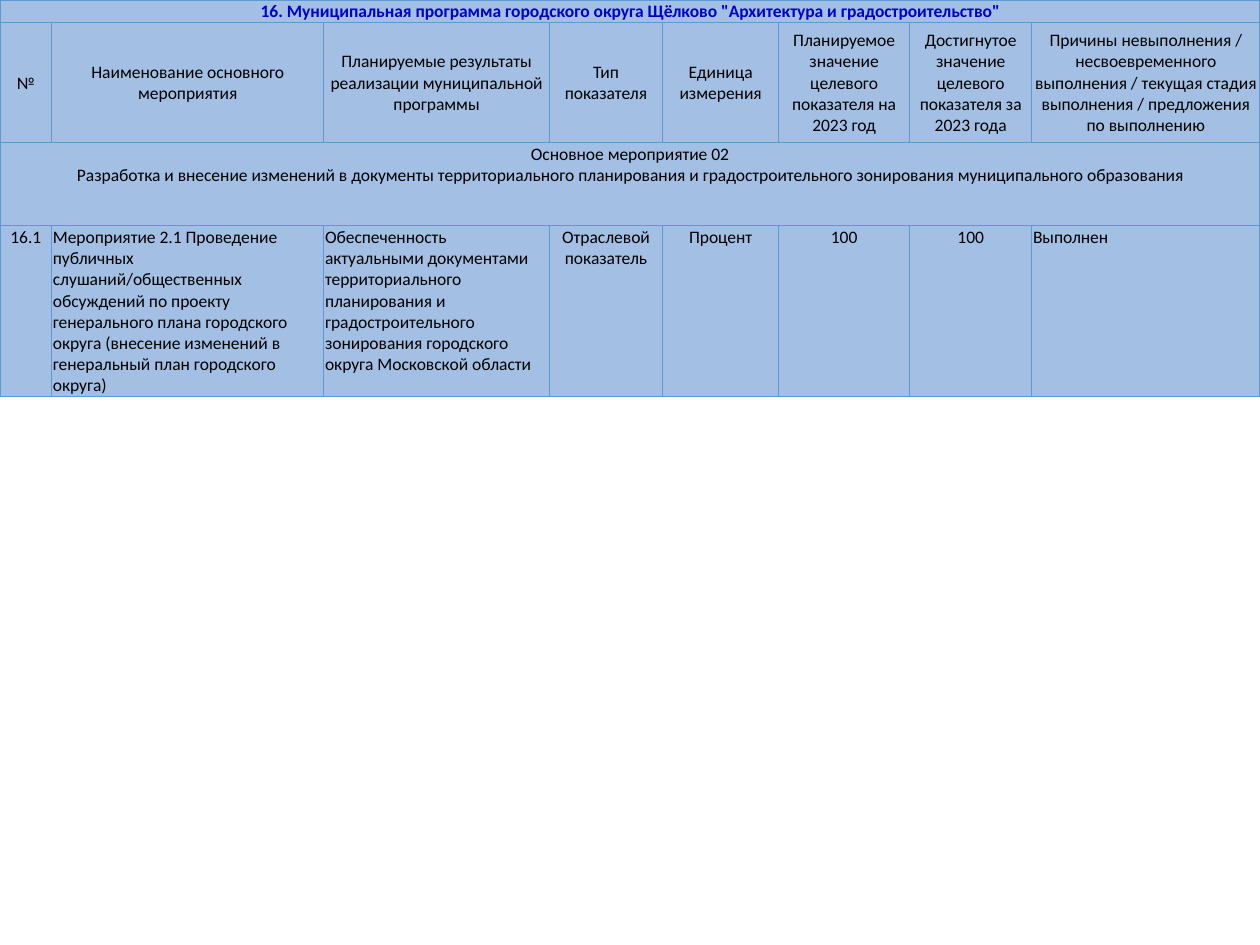
from dataclasses import dataclass

from lxml import etree
from pptx import Presentation
from pptx import util as u
from pptx.dml.color import RGBColor
from pptx.enum import text
from pptx.oxml import ns

FONT = "Calibri"
FILL = RGBColor(0xA3, 0xC0, 0xE4)
BORDER = RGBColor(0x5B, 0x9B, 0xD5)
TITLE_BLUE = RGBColor(0x00, 0x00, 0xCC)
BLACK = RGBColor(0x00, 0x00, 0x00)

COLUMN_WIDTHS = [0.41, 2.16, 1.79, 0.9, 0.92, 1.04, 0.97, 1.81]
ROW_HEIGHTS = [0.18, 0.95, 0.66, 1.36]


@dataclass
class CellStyle:
    color: RGBColor = BLACK
    bold: bool = False
    centered: bool = True
    middle: bool = False


TITLE = CellStyle(color=TITLE_BLUE, bold=True)
HEADER = CellStyle(middle=True)
CENTERED = CellStyle()
LEFT = CellStyle(centered=False)

PROGRAM_TITLE = ('16. Муниципальная программа городского округа Щёлково '
                 '"Архитектура и градостроительство"')
HEADERS = [
    "№",
    "Наименование основного мероприятия",
    "Планируемые результаты реализации муниципальной программы",
    "Тип показателя",
    "Единица измерения",
    "Планируемое значение целевого показателя на 2023 год",
    "Достигнутое значение целевого показателя за 2023 года",
    "Причины невыполнения / несвоевременного выполнения / текущая стадия "
    "выполнения / предложения по выполнению",
]
SECTION = [
    "Основное мероприятие 02",
    "Разработка и внесение изменений в документы территориального планирования "
    "и градостроительного зонирования муниципального образования",
]
ACTIVITY = [
    ("16.1", CENTERED),
    ("Мероприятие 2.1 Проведение публичных слушаний/общественных обсуждений "
     "по проекту генерального плана городского округа (внесение изменений "
     "в генеральный план городского округа)", LEFT),
    ("Обеспеченность актуальными документами территориального планирования "
     "и градостроительного зонирования городского округа Московской области", LEFT),
    ("Отраслевой показатель", CENTERED),
    ("Процент", CENTERED),
    ("100", CENTERED),
    ("100", CENTERED),
    ("Выполнен", LEFT),
]


def format_cell(cell) -> None:
    """Set the margins, borders and fill shared by every cell."""
    cell.margin_left = cell.margin_right = cell.margin_top = u.Inches(0.01)
    cell.margin_bottom = 0
    properties = cell._tc.get_or_add_tcPr()
    for side in ("a:lnL", "a:lnR", "a:lnT", "a:lnB"):
        line = etree.SubElement(properties, ns.qn(side), w=str(u.Pt(0.5)))
        solid = etree.SubElement(line, ns.qn("a:solidFill"))
        etree.SubElement(solid, ns.qn("a:srgbClr"), val=str(BORDER))
    cell.fill.solid()
    cell.fill.fore_color.rgb = FILL


def write_cell(cell, lines: list[str], style: CellStyle) -> None:
    """Write the lines as runs of one paragraph."""
    anchor = text.MSO_ANCHOR
    cell.vertical_anchor = anchor.MIDDLE if style.middle else anchor.TOP
    paragraph = cell.text_frame.paragraphs[0]
    paragraph.alignment = text.PP_ALIGN.CENTER if style.centered else text.PP_ALIGN.LEFT
    for index, line in enumerate(lines):
        if index:
            paragraph.add_line_break()
        run = paragraph.add_run()
        run.text = line
        run.font.name = FONT
        run.font.size = u.Pt(10)
        run.font.bold = style.bold
        run.font.color.rgb = style.color


def add_program_table(slide) -> None:
    table = slide.shapes.add_table(
        len(ROW_HEIGHTS), len(COLUMN_WIDTHS), 0, 0,
        u.Inches(sum(COLUMN_WIDTHS)), u.Inches(sum(ROW_HEIGHTS))).table
    table.first_row = table.horz_banding = False
    for column, width in zip(table.columns, COLUMN_WIDTHS):
        column.width = u.Inches(width)
    for row, height in zip(table.rows, ROW_HEIGHTS):
        row.height = u.Inches(height)
    for cell in table.iter_cells():
        format_cell(cell)

    # Full-width rows: programme title and section
    last_column = len(COLUMN_WIDTHS) - 1
    for row, lines, style in ((0, [PROGRAM_TITLE], TITLE), (2, SECTION, CENTERED)):
        table.cell(row, 0).merge(table.cell(row, last_column))
        write_cell(table.cell(row, 0), lines, style)

    # Column headers and activity
    for column, (header, (value, style)) in enumerate(zip(HEADERS, ACTIVITY)):
        write_cell(table.cell(1, column), [header], HEADER)
        write_cell(table.cell(3, column), [value], style)


def main() -> None:
    presentation = Presentation()
    presentation.slide_width = u.Inches(10)
    presentation.slide_height = u.Inches(7.5)
    slide = presentation.slides.add_slide(presentation.slide_layouts[6])
    add_program_table(slide)
    presentation.save("out.pptx")


if __name__ == "__main__":
    main()
